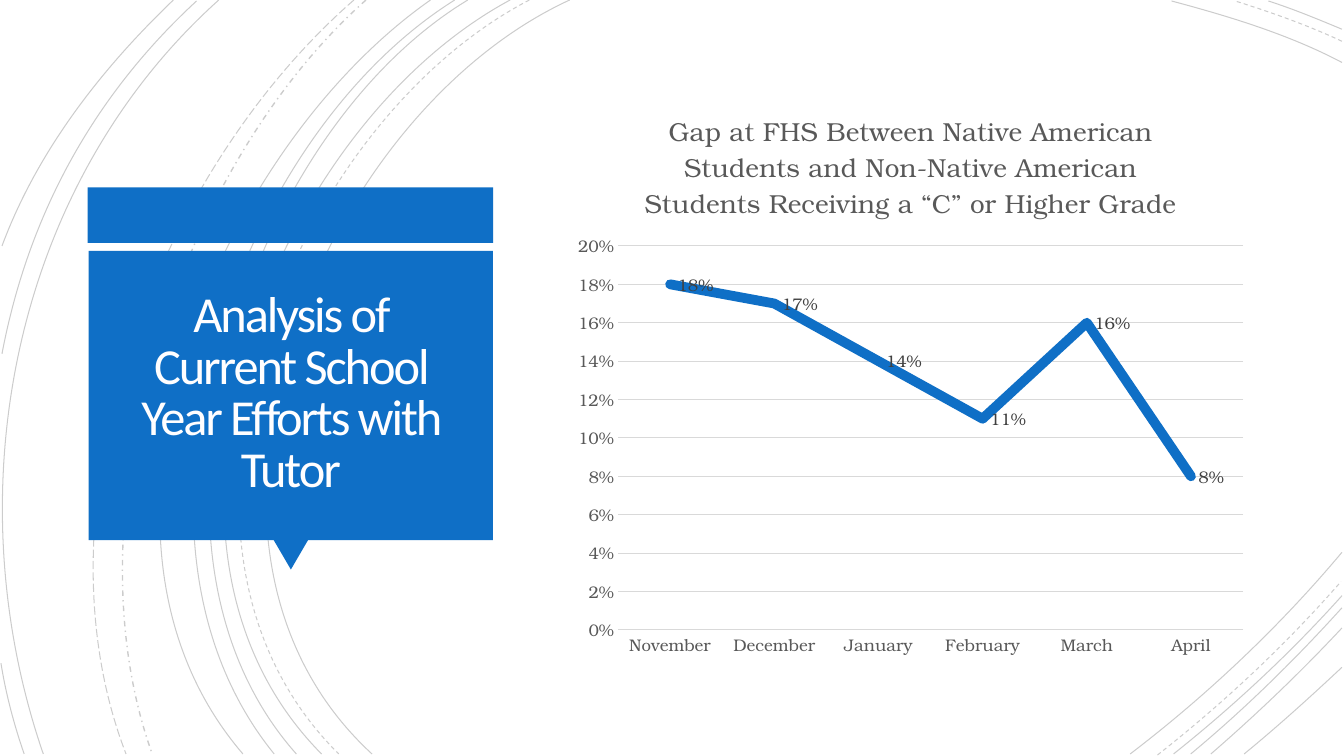
from lxml import etree
from pptx import Presentation
from pptx.chart.data import CategoryChartData
from pptx.dml.color import RGBColor
from pptx.enum.chart import XL_CHART_TYPE, XL_LABEL_POSITION, XL_MARKER_STYLE, XL_TICK_MARK
from pptx.enum.dml import MSO_LINE
from pptx.enum.shapes import MSO_SHAPE
from pptx.enum.text import MSO_ANCHOR, PP_ALIGN
from pptx.oxml import parse_xml
from pptx.oxml.ns import nsdecls, qn
from pptx.util import Inches, Pt

COLORS = {"blue": "0F6FC6", "arc": "000000", "title": "FFFEFF",
          "axis": "595959", "grid": "D9D9D9", "label": "404040"}
TITLE_FONT = "Calibri"
CHART_FONT = "TeX Gyre Bonum"
TITLE_ONLY = 5
CHART_WIDTH, CHART_HEIGHT = 6.87, 5.74

SOLID, DASH = MSO_LINE.SOLID, MSO_LINE.DASH
DASH_DOT, LONG_DASH = MSO_LINE.DASH_DOT, MSO_LINE.LONG_DASH

# Start, two control points and end of each background arc, then its dash
ARCS = [
    ((5.65, 0), (3.15, 1.15), (1.43, 5.4), (3.69, 7.48), SOLID),
    ((13.31, 0.62), (12.78, 0.34), (12.18, 0.16), (11.62, 0.01), SOLID),
    ((11.21, 7.48), (11.97, 6.9), (12.69, 6.22), (13.31, 5.48), SOLID),
    ((5.25, 0), (2.85, 1.25), (1.23, 5.37), (3.36, 7.48), DASH),
    ((13.31, 0.41), (12.97, 0.25), (12.6, 0.12), (12.25, 0.01), DASH),
    ((11.48, 7.49), (12.13, 6.98), (12.75, 6.4), (13.3, 5.77), DASH),
    ((5.06, 0), (2.7, 1.27), (1.1, 5.37), (3.19, 7.48), SOLID),
    ((13.31, 0.29), (13.07, 0.19), (12.83, 0.09), (12.58, 0.01), SOLID),
    ((11.64, 7.48), (12.23, 7.01), (12.8, 6.48), (13.31, 5.91), SOLID),
    ((4.64, 0), (2.44, 1.33), (1.1, 5.41), (2.94, 7.48), SOLID),
    ((11.81, 7.48), (12.34, 7.04), (12.84, 6.55), (13.31, 6.03), SOLID),
    ((4.51, 0), (2.31, 1.38), (0.97, 5.33), (2.72, 7.48), SOLID),
    ((12.01, 7.48), (12.46, 7.09), (12.9, 6.67), (13.31, 6.23), SOLID),
    ((4.27, 0), (2.17, 1.47), (0.53, 5.29), (2.41, 7.48), SOLID),
    ((12.34, 7.48), (12.67, 7.21), (12.99, 6.92), (13.31, 6.62), SOLID),
    ((3.63, 0), (1.76, 1.66), (0.65, 5.09), (1.51, 7.48), DASH_DOT),
    ((3.51, 0), (1.57, 1.69), (0.29, 4.99), (1.25, 7.48), LONG_DASH),
    ((2.17, 0), (0.11, 1.85), (-0.46, 4.9), (0.43, 7.48), SOLID),
    ((1.95, 0.01), (0.92, 0.96), (0.28, 2.14), (0.02, 3.51), SOLID),
    ((0.01, 6.58), (0.06, 6.89), (0.14, 7.19), (0.24, 7.48), SOLID),
    ((1.72, 0), (1, 0.69), (0.37, 1.5), (0.02, 2.44), SOLID),
]

GAP_BY_MONTH = {"November": 0.18, "December": 0.17, "January": 0.14,
                "February": 0.11, "March": 0.16, "April": 0.08}


def rgb(name):
    return RGBColor.from_string(COLORS[name])


def set_font(font, name, size, color):
    font.name, font.size, font.bold = name, Pt(size), False
    font.color.rgb = rgb(color)


def add_arc(slide, *points, dash):
    """Draw one cubic curve: start, two control points, end."""
    first, *rest = [(Inches(x), Inches(y)) for x, y in points]
    builder = slide.shapes.build_freeform(*first)
    builder.add_line_segments(rest, close=False)
    sp = builder.convert_to_shape()
    segments = list(sp._element.iter(qn("a:lnTo")))
    curve = etree.SubElement(segments[0].getparent(), qn("a:cubicBezTo"))
    for segment in segments:
        curve.append(segment[0])
        segment.getparent().remove(segment)
    sp.shadow.inherit = False
    sp.fill.background()
    sp.line.color.rgb = rgb("arc")
    sp.line.width = Pt(1 if dash == DASH_DOT else 0.75)
    sp.line.dash_style = dash
    color = sp.line._get_or_add_ln().find(".//" + qn("a:srgbClr"))
    etree.SubElement(color, qn("a:alpha")).set("val", "20000")


def add_block(slide, kind, left, top, width, height, rotation=0):
    sp = slide.shapes.add_shape(kind, Inches(left), Inches(top), Inches(width), Inches(height))
    sp.rotation = rotation
    sp.shadow.inherit = False
    sp.fill.solid()
    sp.fill.fore_color.rgb = rgb("blue")
    sp.line.fill.background()


def add_title(slide, text):
    sp = slide.shapes.title
    slide.shapes._spTree.append(sp._element)  # bring in front of the blue box
    sp.left, sp.top, sp.width, sp.height = map(Inches, (0.97, 2.57, 3.83, 2.69))
    tf = sp.text_frame
    tf.word_wrap = True
    tf.vertical_anchor = MSO_ANCHOR.MIDDLE
    tf.margin_left = tf.margin_top = tf.margin_right = tf.margin_bottom = Inches(0.25)
    p = tf.paragraphs[0]
    p.alignment = PP_ALIGN.CENTER
    p.line_spacing = 0.85
    r = p.add_run()
    r.text = text
    set_font(r.font, TITLE_FONT, 36, "title")
    r.font._element.set("spc", "-150")


def format_axis(axis):
    axis.major_tick_mark = axis.minor_tick_mark = XL_TICK_MARK.NONE
    set_font(axis.tick_labels.font, CHART_FONT, 12, "axis")


def set_plot_area(chart, left, top, width, height):
    """Fix the inner plot area, in inches from the chart's corner."""
    plot_area = chart._chartSpace.chart.plotArea
    for old in plot_area.findall(qn("c:layout")):
        plot_area.remove(old)
    shares = {"x": left / CHART_WIDTH, "y": top / CHART_HEIGHT,
              "w": width / CHART_WIDTH, "h": height / CHART_HEIGHT}
    sizes = "".join(f'<c:{tag} val="{share:.4f}"/>' for tag, share in shares.items())
    plot_area.insert(0, parse_xml(
        f'<c:layout {nsdecls("c")}><c:manualLayout><c:layoutTarget val="inner"/>'
        f'<c:xMode val="edge"/><c:yMode val="edge"/>{sizes}</c:manualLayout></c:layout>'))


def add_gap_chart(slide, title):
    data = CategoryChartData(number_format="0%")
    data.categories = GAP_BY_MONTH.keys()
    data.add_series("Series 1", GAP_BY_MONTH.values())
    chart = slide.shapes.add_chart(XL_CHART_TYPE.LINE_MARKERS_STACKED, Inches(5.6), Inches(0.88),
                                   Inches(CHART_WIDTH), Inches(CHART_HEIGHT), data).chart
    chart.has_legend = False
    chart.font.name, chart.font.size = CHART_FONT, Pt(10)

    chart.has_title = True
    r = chart.chart_title.text_frame.paragraphs[0].add_run()
    r.text = title
    set_font(r.font, CHART_FONT, 18.6, "axis")
    chart.chart_title.include_in_layout = False
    set_plot_area(chart, 0.53, 1.56, 6.2, 3.81)

    months, percent = chart.category_axis, chart.value_axis
    format_axis(months)
    format_axis(percent)
    percent.minimum_scale, percent.maximum_scale, percent.major_unit = 0, 0.2, 0.02
    percent.tick_labels.number_format = "0%"
    percent.tick_labels.number_format_is_linked = False
    percent.format.line.fill.background()
    for line in (months.format.line, percent.major_gridlines.format.line):
        line.color.rgb = rgb("grid")
        line.width = Pt(0.75)

    plot = chart.plots[0]
    plot.vary_by_categories = False
    series = plot.series[0]
    series.smooth = False
    series.format.line.color.rgb = rgb("blue")
    series.format.line.width = Pt(7)
    series.format.line._get_or_add_ln().set("cap", "rnd")
    marker = series.marker
    marker.style, marker.size = XL_MARKER_STYLE.CIRCLE, 5
    marker.format.fill.solid()
    marker.format.fill.fore_color.rgb = rgb("blue")
    marker.format.line.color.rgb = rgb("blue")
    labels = series.data_labels
    labels.show_value = True
    labels.position = XL_LABEL_POSITION.RIGHT
    labels.number_format, labels.number_format_is_linked = "0%", False
    set_font(labels.font, CHART_FONT, 12, "label")


def main():
    prs = Presentation()
    prs.slide_width, prs.slide_height = Inches(13.33), Inches(7.5)
    slide = prs.slides.add_slide(prs.slide_layouts[TITLE_ONLY])
    for *points, dash in ARCS:
        add_arc(slide, *points, dash=dash)
    add_block(slide, MSO_SHAPE.RECTANGLE, 0.87, 1.86, 4.02, 0.55)
    add_block(slide, MSO_SHAPE.ISOSCELES_TRIANGLE, 2.71, 5.35, 0.35, 0.3, rotation=180)
    add_block(slide, MSO_SHAPE.RECTANGLE, 0.88, 2.49, 4.01, 2.87)
    add_title(slide, "Analysis of Current School Year Efforts with Tutor")
    add_gap_chart(slide, "Gap at FHS Between Native American Students and Non-Native American "
                         "Students Receiving a “C” or Higher Grade")
    prs.save("out.pptx")


if __name__ == "__main__":
    main()
